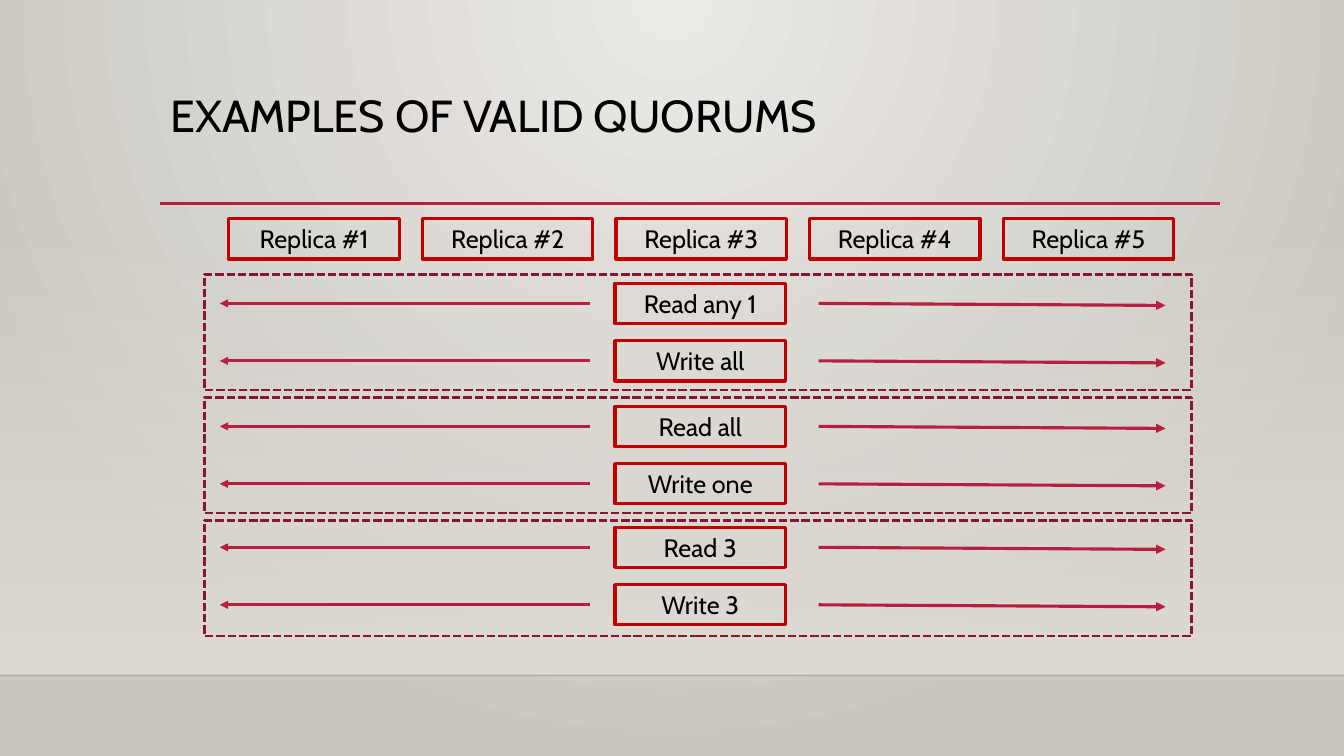
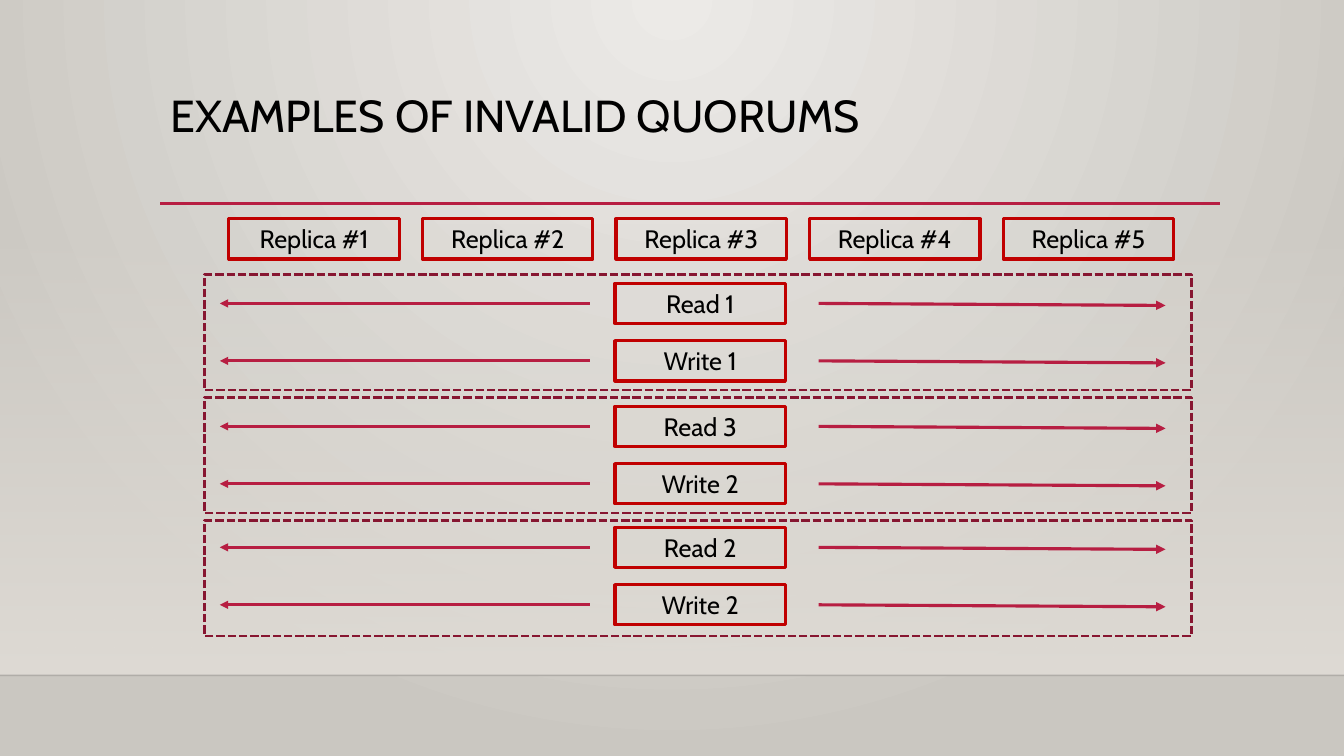
from pptx import Presentation
from pptx.dml.color import RGBColor
from pptx.enum.dml import MSO_LINE
from pptx.enum.shapes import MSO_CONNECTOR, MSO_SHAPE
from pptx.enum.text import MSO_ANCHOR, MSO_AUTO_SIZE, PP_ALIGN
from pptx.oxml import parse_xml
from pptx.oxml.ns import nsdecls, qn
from pptx.oxml.xmlchemy import OxmlElement as Node
from pptx.util import Inches, Pt

SLIDES = [
    ("EXAMPLES OF VALID QUORUMS",
     [("Read any 1", "Write all"), ("Read all", "Write one"), ("Read 3", "Write 3")]),
    ("EXAMPLES OF INVALID QUORUMS",
     [("Read 1", "Write 1"), ("Read 3", "Write 2"), ("Read 2", "Write 2")]),
]
COUNT = 5

FONT = "Cabin"
BLACK = RGBColor(0, 0, 0)
RED = RGBColor(0xC0, 0, 0)
ROSE = RGBColor(0xB7, 0x1E, 0x42)
WINE = RGBColor(0x87, 0x16, 0x31)
PALE = RGBColor(0xEC, 0xEA, 0xE7)
STONE = RGBColor(0xCA, 0xC7, 0xC1)
SAND = RGBColor(0xDF, 0xDB, 0xD5)

WIDE, HIGH = 13.33, 7.5
LEFT, RULE_W, RULE_Y = 1.59, 10.51, 2.02
TITLE = (LEFT, 0.88, 10.5, 1.15)
FADE_Y, FLOOR = 2.21, 6.7
BOX_W, BOX_H = 1.69, 0.4
COL_X, COL_STEP, HEAD_Y = 2.27, 1.92, 2.17
MID_X = 6.1
GROUP = (2.03, 2.72, 9.79, 1.15)
GROUP_STEP = 1.22
PADS = (0.09, 0.09, 0.07)
ROW_STEP = 0.57
WEST, EAST, DROP = (5.85, 2.18), (8.12, 11.56), 0.02


def style(item, **values):
    for name, value in values.items():
        setattr(item, name, value)


def shade(owner, first, last, clear, way):
    """Swap the solid fill of owner for a two-stop gradient."""
    alpha = '<a:alpha val="0"/>' if clear else ""
    grad = parse_xml(
        f'<a:gradFill {nsdecls("a")} rotWithShape="1"><a:gsLst>'
        f'<a:gs pos="0"><a:srgbClr val="{first}">{alpha}</a:srgbClr></a:gs>'
        f'<a:gs pos="100000"><a:srgbClr val="{last}"/></a:gs>'
        f'</a:gsLst>{way}</a:gradFill>')
    owner.replace(owner.find(qn("a:solidFill")), grad)


def add_rect(slide, x, y, w, h):
    rect = slide.shapes.add_shape(
        MSO_SHAPE.RECTANGLE, *map(Inches, (x, y, w, h)))
    rect.shadow.inherit = False
    rect.fill.background()
    return rect


def outline(rect, color, width):
    rect.line.color.rgb = color
    rect.line.width = Pt(width)


def add_line(slide, start, end, color, width, arrow=False, alpha=None):
    link = slide.shapes.add_connector(
        MSO_CONNECTOR.STRAIGHT, *map(Inches, start + end))
    outline(link, color, width)
    stroke = link.line._get_or_add_ln()
    if arrow:
        tip = Node("a:tailEnd")
        tip.set("type", "triangle")
        stroke.append(tip)
    if alpha:
        veil = Node("a:alpha")
        veil.set("val", str(alpha * 1000))
        stroke.find(".//" + qn("a:srgbClr")).append(veil)
    link._element.spPr.append(Node("a:effectLst"))


def write(frame, text, size, align, **layout):
    frame.text = text
    style(frame, word_wrap=True, **layout)
    para = frame.paragraphs[0]
    para.alignment = align
    font = para.runs[0].font
    style(font, name=FONT, size=Pt(size))
    font.color.rgb = BLACK
    return para


def add_label(slide, text, x, y):
    box = add_rect(slide, x, y, BOX_W, BOX_H)
    outline(box, RED, 2.25)
    write(box.text_frame, text, 18, PP_ALIGN.CENTER,
          vertical_anchor=MSO_ANCHOR.MIDDLE,
          auto_size=MSO_AUTO_SIZE.SHAPE_TO_FIT_TEXT)


def set_back(master):
    master.background.fill.solid()
    way = ('<a:path path="circle">'
           '<a:fillToRect l="43000" r="43000" b="100000"/></a:path>')
    shade(master.element.find(".//" + qn("p:bgPr")), PALE, STONE, False, way)


def add_frame(slide, text):
    """Draw the fading wall, the floor line, the title and its rule."""
    wall = add_rect(slide, 0, FADE_Y, WIDE, FLOOR - FADE_Y)
    wall.fill.solid()
    wall.line.fill.background()
    shade(wall._element.spPr, SAND, SAND, True, '<a:lin ang="5400000" scaled="0"/>')
    add_line(slide, (0, FLOOR), (WIDE, FLOOR), BLACK, 1, alpha=20)
    add_line(slide, (LEFT, RULE_Y), (LEFT + RULE_W, RULE_Y), ROSE, 2.5)
    title = slide.shapes.title
    style(title, **dict(zip(("left", "top", "width", "height"), map(Inches, TITLE))))
    para = write(title.text_frame, text, 32, PP_ALIGN.LEFT,
                 vertical_anchor=MSO_ANCHOR.TOP, auto_size=MSO_AUTO_SIZE.NONE)
    para.line_spacing = 0.9


def add_row(slide, text, y):
    add_label(slide, text, MID_X, y)
    mid = y + BOX_H / 2
    for (start, end), drop, width in ((EAST, DROP, 2.25), (WEST, 0, 2)):
        add_line(slide, (start, mid), (end, mid + drop), ROSE, width, arrow=True)


def add_group(slide, index, rows):
    x, y, w, h = GROUP
    y += index * GROUP_STEP
    for row, text in enumerate(rows):
        add_row(slide, text, y + PADS[index] + row * ROW_STEP)
    edge = add_rect(slide, x, y, w, h)
    outline(edge, WINE, 2)
    edge.line.dash_style = MSO_LINE.SQUARE_DOT


def main():
    deck = Presentation()
    style(deck, slide_width=Inches(WIDE), slide_height=Inches(HIGH))
    set_back(deck.slide_master)
    for title, groups in SLIDES:
        slide = deck.slides.add_slide(deck.slide_layouts[5])
        add_frame(slide, title)
        for col in range(COUNT):
            add_label(slide, f"Replica #{col + 1}", COL_X + col * COL_STEP, HEAD_Y)
        for index, rows in enumerate(groups):
            add_group(slide, index, rows)
    deck.save("out.pptx")


if __name__ == "__main__":
    main()
